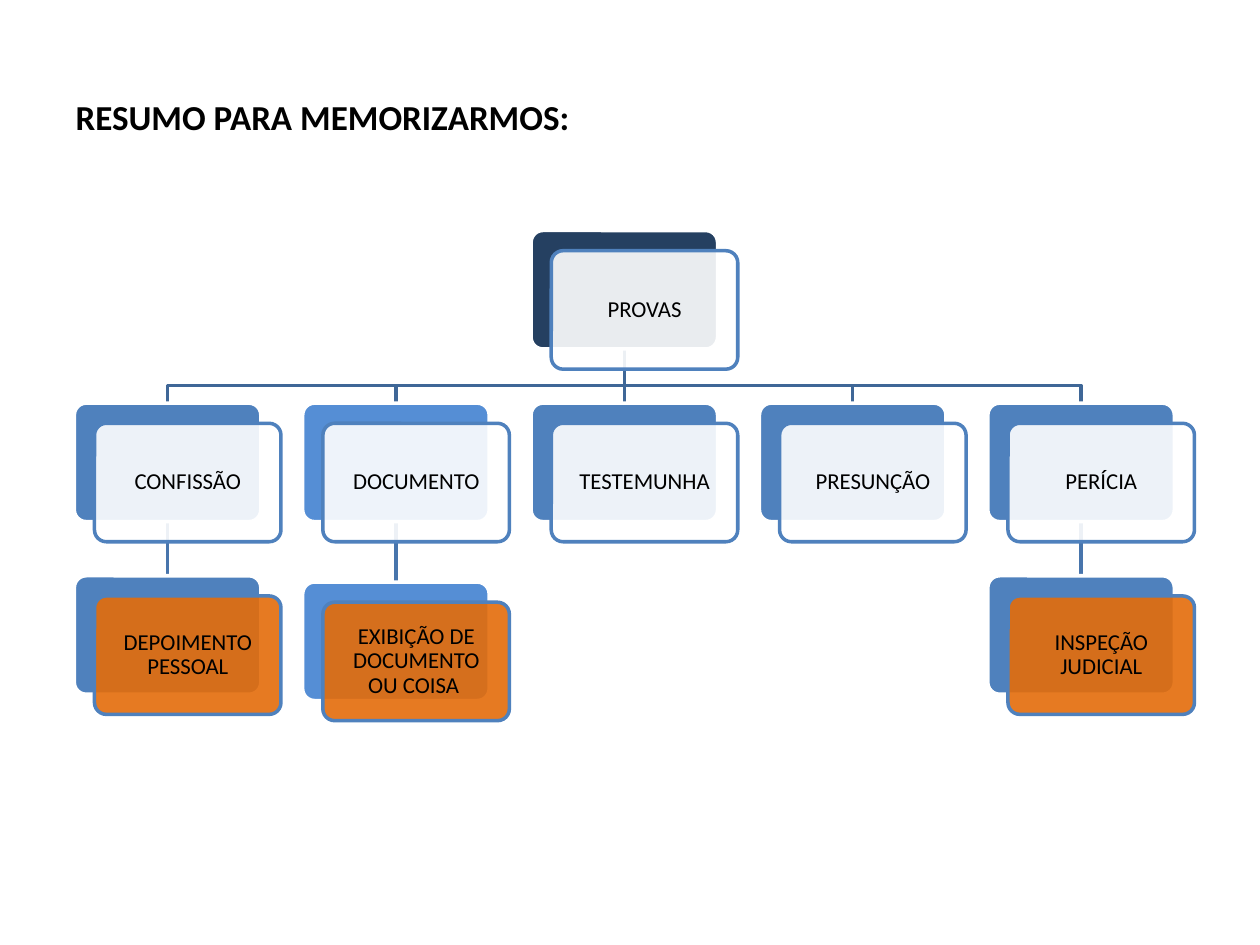
import pptx
import pptx.util
import pptx.dml.color
import pptx.enum.shapes
import pptx.enum.text
import pptx.oxml
import pptx.oxml.ns
from pptx.util import Inches, Pt

WIDE, HIGH = 1.48, 0.94
TOP, MID = 1.83, 3.2
LEFT, STEP = 0.59, 1.8125
BLUE, SKY, NAVY = "4F81BD", "558ED5", "254061"
WHITE, AMBER = "FFFFFF", "E46C0A"


def paint(color, code):
    color.rgb = pptx.dml.color.RGBColor.from_string(code)


def card(left, top, back, face, label):
    """Draw a solid back plate and a translucent front plate with its label."""
    for shift, fill, edge in ((0, back, WHITE), (0.16, face, BLUE)):
        box = deck.shapes.add_shape(
            pptx.enum.shapes.MSO_SHAPE.ROUNDED_RECTANGLE,
            Inches(left + shift), Inches(top + shift), Inches(WIDE), Inches(HIGH))
        box.adjustments[0] = 0.1
        box.shadow.inherit = False
        box.fill.solid()
        paint(box.fill.fore_color, fill)
        paint(box.line.color, edge)
        box.line.width = Pt(2)
    # Front plate: 90 % opaque, holds the text
    tint = box.fill._xPr.find(".//" + pptx.oxml.ns.qn("a:srgbClr"))
    tint.append(pptx.oxml.parse_xml(
        '<a:alpha %s val="90000"/>' % pptx.oxml.ns.nsdecls("a")))
    frame = box.text_frame
    frame.text = label
    frame.word_wrap = True
    frame.vertical_anchor = pptx.enum.text.MSO_ANCHOR.MIDDLE
    frame.margin_left = frame.margin_right = Inches(0.08)
    frame.margin_top = frame.margin_bottom = Inches(0.08)
    para = frame.paragraphs[0]
    para.alignment = pptx.enum.text.PP_ALIGN.CENTER
    para.line_spacing = 0.9
    font = para.runs[0].font
    font.name, font.size = "Calibri", Pt(13)
    paint(font.color, "000000")


show = pptx.Presentation()
show.slide_width, show.slide_height = Inches(10), Inches(7.5)
deck = show.slides.add_slide(show.slide_layouts[5])

# Title
title = deck.shapes.title
title.left, title.top = Inches(0.5), Inches(0.3)
title.width, title.height = Inches(9), Inches(1.25)
title.text_frame.text = "RESUMO PARA MEMORIZARMOS:"
title.text_frame.vertical_anchor = pptx.enum.text.MSO_ANCHOR.MIDDLE
head = title.text_frame.paragraphs[0]
head.alignment = pptx.enum.text.PP_ALIGN.LEFT
font = head.runs[0].font
font.name, font.size, font.bold = "Calibri", Pt(20), True
paint(font.color, "000000")

# Each branch: label, back colour, child label, child top
tree = [
    ("CONFISSÃO", BLUE, "DEPOIMENTO PESSOAL", 4.57),
    ("DOCUMENTO", SKY, "EXIBIÇÃO DE DOCUMENTO OU COISA ", 4.62),
    ("TESTEMUNHA", BLUE, None, None),
    ("PRESUNÇÃO", BLUE, None, None),
    ("PERÍCIA", BLUE, "INSPEÇÃO JUDICIAL", 4.57),
]
root = LEFT + 2 * STEP
hub = root + WIDE / 2

# Lines, behind the cards
for col, (label, back, child, low) in enumerate(tree):
    mid = LEFT + col * STEP + WIDE / 2
    links = []
    if mid == hub:
        links.append((TOP + HIGH, MID, "3F6797"))
    else:
        path = [(Inches(x), Inches(y))
                for x, y in ((hub, TOP + HIGH), (hub, 3.06), (mid, 3.06), (mid, MID))]
        pen = deck.shapes.build_freeform(*path[0])
        pen.add_line_segments(path[1:], close=False)
        elbow = pen.convert_to_shape()
        elbow.shadow.inherit = False
        elbow.fill.background()
        paint(elbow.line.color, "3F6797")
        elbow.line.width = Pt(2)
    if child:
        links.append((MID + HIGH, low, "4875AC"))
    for start, end, code in links:
        link = deck.shapes.add_connector(
            pptx.enum.shapes.MSO_CONNECTOR.STRAIGHT,
            Inches(mid), Inches(start), Inches(mid), Inches(end))
        paint(link.line.color, code)
        link.line.width = Pt(2)
        link._element.spPr.append(pptx.oxml.parse_xml(
            "<a:effectLst %s/>" % pptx.oxml.ns.nsdecls("a")))

# Cards
card(root, TOP, NAVY, WHITE, "PROVAS")
for col, (label, back, child, low) in enumerate(tree):
    left = LEFT + col * STEP
    card(left, MID, back, WHITE, label)
    if child:
        card(left, low, back, AMBER, child)

show.save("out.pptx")
